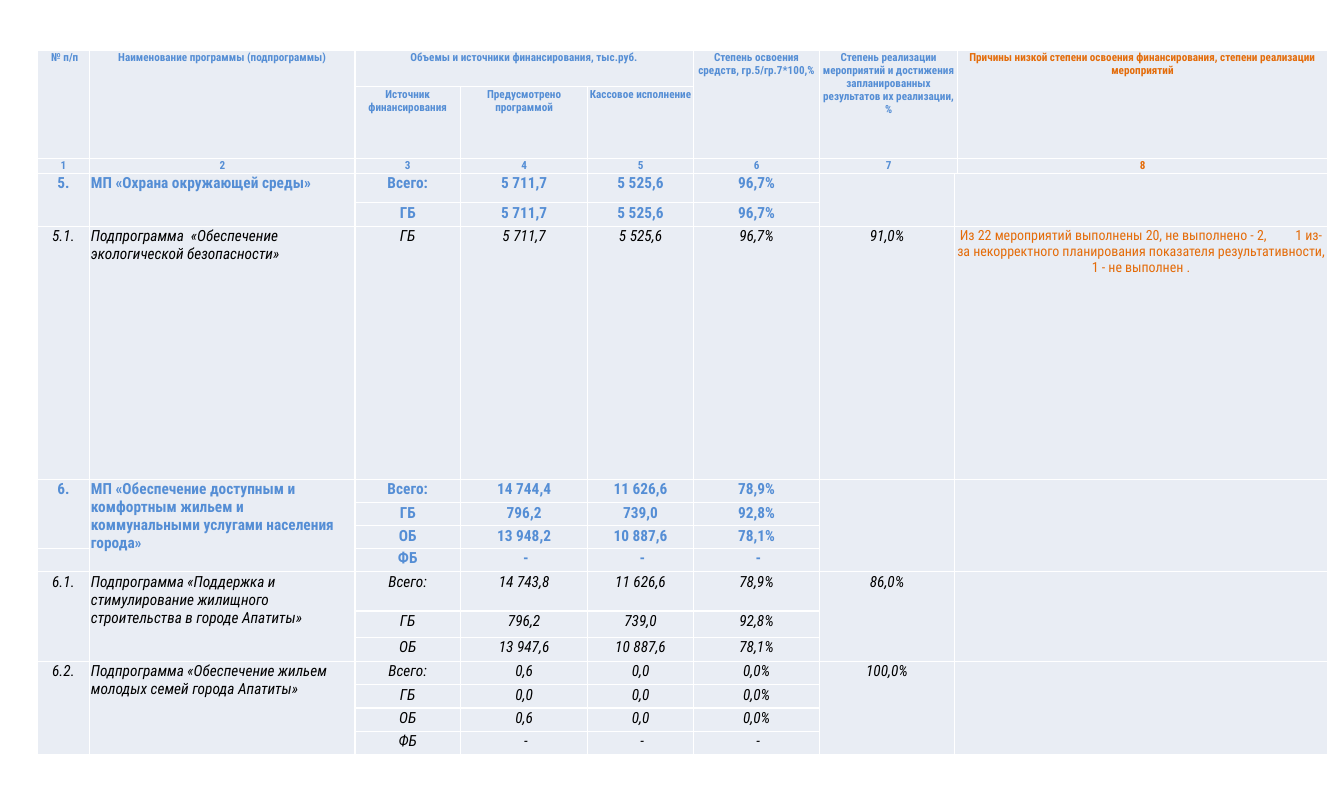
from dataclasses import dataclass

from lxml.etree import SubElement
from pptx import Presentation
from pptx.dml.color import RGBColor
from pptx.enum.text import MSO_ANCHOR, PP_ALIGN
from pptx.oxml.ns import qn
from pptx.util import Cm, Pt


@dataclass(frozen=True)
class Theme:
    font: str = "Roboto Condensed"
    blue: str = "558ED5"
    orange: str = "E46C0A"
    black: str = "000000"
    cell: str = "E9EDF4"
    border: str = "FFFFFF"
    heading_size: int = 8
    reason_size: int = 10
    body_size: int = 11
    border_width: int = 1


@dataclass(frozen=True)
class Programme:
    number: str
    name: str
    funding: tuple  # source, planned, spent, share spent
    heights: tuple
    main: bool = False
    result: str = ""
    reason: str = ""
    number_rows: int = 0  # rows under the number, when fewer than all


THEME = Theme()
LEFT, HEADING_TOP, BODY_TOP = 0.94, 1.27, 4.38
SHARED_WIDTHS = [1.33, 6.71, 2.67, 3.22, 2.67, 3.2]
HEADING_WIDTHS = SHARED_WIDTHS + [3.48, 9.37]
BODY_WIDTHS = SHARED_WIDTHS + [3.4, 9.45]
HEADING_HEIGHTS = [0.92, 1.81, 0.38]
LINE = 0.59
NUMBER, NAME, FUNDING, RESULT, REASON = 0, 1, 2, 6, 7

HEADINGS = [
    [" № п/п", "Наименование программы (подпрограммы)",
     "Объемы и источники финансирования, тыс.руб.", "", "",
     "Степень освоения средств, гр.5/гр.7*100,%",
     "Степень реализации мероприятий и достижения запланированных "
     "результатов их реализации, %",
     "Причины низкой степени освоения финансирования, степени реализации мероприятий"],
    ["", "", "Источник финансирования", "Предусмотрено программой",
     "Кассовое исполнение", "", "", ""],
    [str(number) for number in range(1, 9)],
]

NO_FUNDING = ("ФБ", " -", " -", " -")
PROGRAMMES = [
    Programme("5.", "МП «Охрана окружающей среды»",
              (("Всего:", "5 711,7", "5 525,6", "96,7%"),
               ("ГБ", "5 711,7", "5 525,6", "96,7%")),
              (0.75, LINE), main=True),
    Programme("5.1.", "Подпрограмма  «Обеспечение экологической безопасности»",
              (("ГБ", "5 711,7", "5 525,6", "96,7%"),),
              (6.4,), result="91,0%",
              reason="Из 22 мероприятий выполнены 20, не выполнено - 2,         1 из-за "
                     "некорректного планирования показателя результативности, "
                     "1 - не выполнен ."),
    Programme("6.", "МП «Обеспечение доступным и комфортным жильем и "
                    "коммунальными услугами населения города»",
              (("Всего:", "14 744,4", "11 626,6", "78,9%"),
               ("ГБ", "796,2", "739,0", "92,8%"),
               ("ОБ", "13 948,2", "10 887,6", "78,1%"),
               NO_FUNDING),
              (LINE, 0.58, 0.58, LINE), main=True, number_rows=3),
    Programme("6.1.", "Подпрограмма «Поддержка и стимулирование жилищного "
                      "строительства в городе Апатиты»",
              (("Всего:", "14 743,8", "11 626,6", "78,9%"),
               ("ГБ", "796,2", "739,0", "92,8%"),
               ("ОБ", "13 947,6", "10 887,6", "78,1%")),
              (0.99, 0.66, 0.61), result="86,0%"),
    Programme("6.2.", "Подпрограмма «Обеспечение жильем молодых семей города Апатиты»",
              (("Всего:", "0,6", "0,0", "0,0%"),
               ("ГБ", "0,0", "0,0", "0,0%"),
               ("ОБ", "0,6", "0,0", "0,0%"),
               NO_FUNDING),
              (LINE,) * 4, result="100,0%"),
]


def add_borders(cell):
    properties = cell._tc.get_or_add_tcPr()
    for side in ("a:lnL", "a:lnR", "a:lnT", "a:lnB"):
        line = SubElement(properties, qn(side), w=str(Pt(THEME.border_width)))
        fill = SubElement(line, qn("a:solidFill"))
        SubElement(fill, qn("a:srgbClr"), val=THEME.border)


def format_cell(cell):
    """Set borders, fill and margins, and keep an empty cell from stretching its row."""
    add_borders(cell)
    cell.fill.solid()
    cell.fill.fore_color.rgb = RGBColor.from_string(THEME.cell)
    cell.margin_left = cell.margin_right = cell.margin_top = Cm(0.03)
    cell.margin_bottom = Cm(0)
    cell.vertical_anchor = MSO_ANCHOR.TOP
    para = cell.text_frame.paragraphs[0]
    SubElement(para._p, qn("a:endParaRPr"), sz=str(THEME.heading_size * 100))


def write(cell, text, size=THEME.body_size, color=THEME.blue, bold=False,
          italic=False, align=PP_ALIGN.CENTER):
    if not text:
        return
    para = cell.text_frame.paragraphs[0]
    para.alignment = align
    span = para.add_run()
    span.text = text
    span.font.name = THEME.font
    span.font.size = Pt(size)
    span.font.bold = bold
    span.font.italic = italic
    span.font.color.rgb = RGBColor.from_string(color)


def merge(table, row, column, rows=1, columns=1):
    if rows * columns > 1:
        table.cell(row, column).merge(table.cell(row + rows - 1, column + columns - 1))


def add_grid(page, top, widths, heights):
    table = page.shapes.add_table(len(heights), len(widths), Cm(LEFT), Cm(top),
                                  Cm(sum(widths)), Cm(sum(heights))).table
    table.first_row = table.horz_banding = False
    for column, width in zip(table.columns, widths):
        column.width = Cm(width)
    for row, height in zip(table.rows, heights):
        row.height = Cm(height)
    for cell in table.iter_cells():
        format_cell(cell)
    return table


def add_headings(page):
    table = add_grid(page, HEADING_TOP, HEADING_WIDTHS, HEADING_HEIGHTS)
    for row, texts in enumerate(HEADINGS):
        for column, text in enumerate(texts):
            color = THEME.orange if column == REASON else THEME.blue
            write(table.cell(row, column), text, size=THEME.heading_size,
                  color=color, bold=True)
    merge(table, 0, FUNDING, columns=3)
    for column in (NUMBER, NAME, 5, RESULT, REASON):
        merge(table, 0, column, rows=2)


def fill_programme(table, top, programme):
    """Write one programme, starting at row top."""
    style = {"color": THEME.blue if programme.main else THEME.black,
             "bold": programme.main, "italic": not programme.main}
    write(table.cell(top, NUMBER), programme.number, **style)
    write(table.cell(top, NAME), programme.name, align=PP_ALIGN.LEFT, **style)
    write(table.cell(top, RESULT), programme.result, **style)
    write(table.cell(top, REASON), programme.reason,
          size=THEME.reason_size, color=THEME.orange)
    for row, values in enumerate(programme.funding, top):
        for column, value in enumerate(values, FUNDING):
            write(table.cell(row, column), value, **style)
    count = len(programme.funding)
    merge(table, top, NUMBER, rows=programme.number_rows or count)
    for column in (NAME, RESULT, REASON):
        merge(table, top, column, rows=count)


def add_programmes(page):
    heights = [height for programme in PROGRAMMES for height in programme.heights]
    table = add_grid(page, BODY_TOP, BODY_WIDTHS, heights)
    top = 0
    for programme in PROGRAMMES:
        fill_programme(table, top, programme)
        top += len(programme.funding)


def main():
    deck = Presentation()
    deck.slide_width, deck.slide_height = Cm(34), Cm(20)
    page = deck.slides.add_slide(deck.slide_layouts[6])
    add_programmes(page)
    add_headings(page)
    deck.save("out.pptx")


if __name__ == "__main__":
    main()
